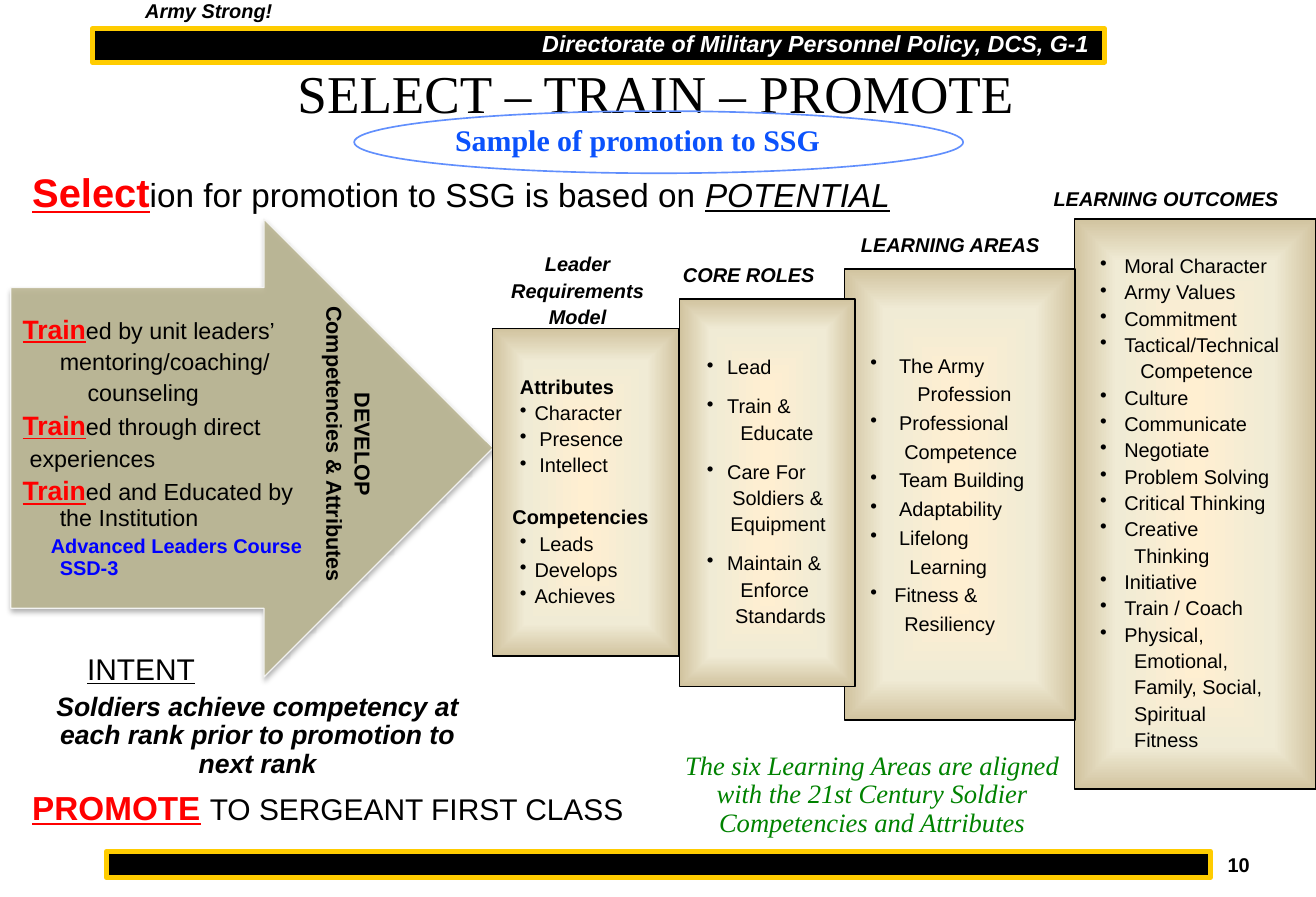
"""Build the Select, Train, Promote slide for sergeant promotion."""
import dataclasses
import typing

import pptx
import pptx.dml.color
import pptx.enum.shapes
import pptx.enum.text
import pptx.oxml
import pptx.oxml.ns
import pptx.util

Cm = pptx.util.Cm
Pt = pptx.util.Pt
Shapes = pptx.enum.shapes.MSO_SHAPE
Align = pptx.enum.text.PP_ALIGN
Anchor = pptx.enum.text.MSO_ANCHOR
Format = dict[str, typing.Any]


@dataclasses.dataclass(frozen=True)
class Theme:
    sans: str = "Arial"
    serif: str = "Times New Roman"
    black: str = "000000"
    white: str = "FFFFFF"
    red: str = "FF0000"
    gold: str = "FFCC00"
    blue: str = "0000FF"
    sample_blue: str = "0B52FC"
    ellipse_blue: str = "618FFD"
    green: str = "008200"
    arrow: str = "BBB693"
    arrow_edge: str = "F9F9F9"
    panel_stops: tuple = ((0, "FFEFD1"), (65, "F0EBD5"), (100, "D1C39F"))
    small: float = 12
    vertical: float = 13
    medium: float = 14
    large: float = 16
    heading: float = 18
    lead: float = 20
    keyword: float = 24
    title: float = 32


THEME = Theme()
PLAIN: Format = {"name": THEME.sans, "size": THEME.small, "color": THEME.black}
LABEL: Format = PLAIN | {"bold": True, "italic": True}
KEYWORD: Format = PLAIN | {"size": THEME.large, "color": THEME.red, "bold": True, "underline": True}
TRAINING: Format = PLAIN | {"size": THEME.medium}
LEAD: Format = PLAIN | {"size": THEME.lead}
COURSE: Format = PLAIN | {"bold": True, "color": THEME.blue}


class Run(typing.NamedTuple):
    text: str
    style: Format = PLAIN


class Line(typing.NamedTuple):
    runs: tuple[Run, ...]
    start: float = 0
    first: float | None = None
    bullet: bool = False
    before: float = 2.9


class Box(typing.NamedTuple):
    left: float
    top: float
    width: float
    height: float

    def lengths(self) -> tuple:
        return tuple(Cm(side) for side in self)


class Panel(typing.NamedTuple):
    box: Box
    lines: tuple[Line, ...]
    spacing: float = 0.9


class Caption(typing.NamedTuple):
    box: Box
    lines: tuple[str, ...]
    style: Format = LABEL
    align: typing.Any = Align.LEFT
    wrap: bool = False
    rotation: float = 0


def item(text: str, start: float, dot: float, before: float = 2.9) -> Line:
    return Line((Run(text),), start, dot, True, before)


def more(text: str, start: float) -> Line:
    return Line((Run(text),), start)


def heading(text: str, start: float, before: float = 2.9) -> Line:
    return Line((Run(text, PLAIN | {"bold": True}),), start, before=before)


def trained(text: str, before: float = 3.5) -> Line:
    return Line((Run("Train", KEYWORD), Run(text, TRAINING)), 0.79, 0, before=before)


OUTCOMES = (
    *(item(text, 0.81, 0.3) for text in ("Moral Character", "Army Values", "Commitment", "Tactical/Technical")),
    more("Competence", 1.15),
    *(item(text, 0.81, 0.3) for text in (
        "Culture", "Communicate", "Negotiate", "Problem Solving", "Critical Thinking", "Creative")),
    more("Thinking", 1.02),
    *(item(text, 0.81, 0.3) for text in ("Initiative", "Train / Coach", "Physical,")),
    *(more(text, 1.02) for text in ("Emotional,", "Family, Social,", "Spiritual", "Fitness")),
)
AREAS = (
    item("The Army", 0.91, 0.3), more("Profession", 1.3),
    item("Professional", 0.91, 0.3), more("Competence", 1.02),
    *(item(text, 0.91, 0.3) for text in ("Team Building", "Adaptability", "Lifelong")),
    more("Learning", 1.13), item("Fitness &", 0.81, 0.3), more("Resiliency", 1.02),
)
ROLES = (
    item("Lead", 0.76, 0.33),
    item("Train &", 0.76, 0.33, 10.5), more("Educate", 1.04),
    item("Care For", 0.76, 0.33, 10.5), more("Soldiers &", 0.87), more("Equipment", 0.83),
    item("Maintain &", 0.76, 0.33, 10.5), more("Enforce", 1.04), more("Standards", 0.93),
)
MODEL = (
    heading("Attributes", 0.33), item("Character", 0.64, 0.33),
    item("Presence", 0.74, 0.33), item("Intellect", 0.74, 0.33),
    heading("Competencies", 0.17, 18.3), item("Leads", 0.74, 0.33),
    item("Develops", 0.64, 0.33), item("Achieves", 0.64, 0.33),
)
TRAINING_LINES = (
    trained("ed by unit leaders’"),
    Line((Run("mentoring/coaching/", TRAINING),), 0.79, before=3.5),
    Line((Run("counseling", TRAINING),), 1.38, before=3.5),
    trained("ed through direct"),
    Line((Run("experiences", TRAINING),), 0.15, before=3.5),
    trained("ed and Educated by the Institution"),
    Line((Run("Advanced Leaders Course SSD-3", COURSE),), 0.79, 0.6),
)
PANELS = (
    Panel(Box(22.81, 4.65, 5.13, 12.11), OUTCOMES),
    Panel(Box(17.93, 5.71, 4.9, 9.58), AREAS, 1.0),
    Panel(Box(14.43, 6.35, 3.73, 8.23), ROLES),
    Panel(Box(10.46, 6.98, 3.96, 6.96), MODEL),
)
BARS = (Box(2.26, 18.08, 23.44, 0.56), Box(1.96, 0.61, 21.49, 0.71))
CAPTIONS = (
    Caption(Box(25.78, 18.03, 1.04, 0.76), ("10",), PLAIN | {"bold": True}, Align.CENTER),
    Caption(Box(11.23, 0.56, 12.19, 0.86), ("Directorate of Military Personnel Policy, DCS, G-1",),
            LABEL | {"size": THEME.medium, "color": THEME.white}, Align.CENTER),
    Caption(Box(2.44, -0.1, 3.99, 0.76), ("Army Strong!",), align=Align.CENTER),
    Caption(Box(3.02, 8.92, 9.04, 1.02), ("DEVELOP", "Competencies & Attributes"),
            PLAIN | {"size": THEME.vertical, "bold": True}, Align.CENTER, rotation=90),
    Caption(Box(0.71, 14.6, 9.52, 2.11),
            ("Soldiers achieve competency at each rank prior to promotion to next rank",),
            LABEL | {"size": THEME.large}, Align.CENTER, True),
    Caption(Box(18.03, 4.88, 4.34, 0.71), ("LEARNING AREAS",)),
    Caption(Box(22.12, 3.89, 5.33, 0.71), ("LEARNING OUTCOMES",)),
    Caption(Box(14.25, 5.51, 3.35, 0.71), ("CORE ROLES",)),
    Caption(Box(1.6, 13.77, 2.82, 0.94), ("INTENT",), PLAIN | {"size": THEME.heading, "underline": True}),
    Caption(Box(14.22, 15.85, 8.59, 2.11),
            ("The six Learning Areas are aligned with the 21st Century Soldier Competencies and Attributes",),
            PLAIN | {"name": THEME.serif, "size": THEME.large, "color": THEME.green, "italic": True},
            Align.CENTER, True),
    Caption(Box(10.59, 5.28, 3.35, 1.85), ("Leader", "Requirements", "Model"), align=Align.CENTER),
)


def rgb(code: str) -> pptx.dml.color.RGBColor:
    return pptx.dml.color.RGBColor.from_string(code)


def apply_format(font: typing.Any, style: Format) -> None:
    for key, value in style.items():
        if key == "color":
            font.color.rgb = rgb(value)
        else:
            setattr(font, key, Pt(value) if key == "size" else value)


def write(frame: typing.Any, lines: typing.Iterable[Line], spacing: float = 0.9,
          align: typing.Any = Align.LEFT, anchor: typing.Any = Anchor.TOP, wrap: bool = True) -> None:
    frame.auto_size = pptx.enum.text.MSO_AUTO_SIZE.NONE
    frame.word_wrap, frame.vertical_anchor = wrap, anchor
    for index, line in enumerate(lines):
        paragraph = frame.add_paragraph() if index else frame.paragraphs[0]
        properties = paragraph._p.get_or_add_pPr()
        first = line.start if line.first is None else line.first
        properties.set("marL", str(Cm(line.start)))
        properties.set("indent", str(Cm(first - line.start)))
        mark = '<a:buChar {} char="•"/>' if line.bullet else "<a:buNone {}/>"
        properties.append(pptx.oxml.parse_xml(mark.format(pptx.oxml.ns.nsdecls("a"))))
        paragraph.alignment, paragraph.line_spacing = align, spacing
        paragraph.space_before = Pt(line.before if index else 0)
        for text, style in line.runs:
            run = paragraph.add_run()
            run.text = text
            apply_format(run.font, style)


def draw_shape(slide: typing.Any, kind: typing.Any, box: Box, fill: str | None, edge: str, weight: float) -> typing.Any:
    shape = slide.shapes.add_shape(kind, *box.lengths())
    shape.shadow.inherit = False
    if fill:
        shape.fill.solid()
        shape.fill.fore_color.rgb = rgb(fill)
    else:
        shape.fill.background()
    shape.line.color.rgb, shape.line.width = rgb(edge), Pt(weight)
    return shape


def draw_panel(slide: typing.Any, panel: Panel) -> None:
    shape = draw_shape(slide, Shapes.RECTANGLE, panel.box, THEME.white, THEME.black, 1)
    stops = "".join(f'<a:gs pos="{place * 1000}"><a:srgbClr val="{code}"/></a:gs>' for place, code in THEME.panel_stops)
    gradient = pptx.oxml.parse_xml(
        f'<a:gradFill {pptx.oxml.ns.nsdecls("a")} rotWithShape="1"><a:gsLst>{stops}</a:gsLst><a:path path="shape">'
        '<a:fillToRect l="50000" t="50000" r="50000" b="50000"/></a:path></a:gradFill>')
    properties = shape._element.spPr
    properties.replace(properties.find(pptx.oxml.ns.qn("a:solidFill")), gradient)
    write(shape.text_frame, panel.lines, panel.spacing, anchor=Anchor.MIDDLE)


def draw_arrow(slide: typing.Any) -> None:
    arrow = draw_shape(slide, Shapes.RIGHT_ARROW, Box(0.23, 4.65, 10.24, 9.73), THEME.arrow, THEME.arrow_edge, 0.75)
    arrow.adjustments[0], arrow.adjustments[1] = 0.7, 0.5
    namespace = pptx.oxml.ns.nsdecls("a")
    properties = arrow._element.spPr
    for color in properties.iter(pptx.oxml.ns.qn("a:srgbClr")):
        color.append(pptx.oxml.parse_xml(f'<a:alpha {namespace} val="90000"/>'))
    properties.find(pptx.oxml.ns.qn("a:effectLst")).append(pptx.oxml.parse_xml(
        f'<a:outerShdw {namespace} blurRad="{Pt(3.1)}" dist="{Pt(1.8)}" dir="5400000" rotWithShape="0">'
        f'<a:srgbClr val="{THEME.black}"><a:alpha val="35000"/></a:srgbClr></a:outerShdw>'))
    arrow.text_frame.margin_right = Cm(0.45)
    write(arrow.text_frame, TRAINING_LINES, anchor=Anchor.MIDDLE)


def draw_caption(slide: typing.Any, caption: Caption) -> None:
    label = slide.shapes.add_textbox(*caption.box.lengths())
    label.rotation = caption.rotation
    lines = [Line((Run(text, caption.style),)) for text in caption.lines]
    write(label.text_frame, lines, align=caption.align, wrap=caption.wrap)


def place(placeholder: typing.Any, box: Box) -> typing.Any:
    for side, value in zip(box._fields, box.lengths()):
        setattr(placeholder, side, value)
    return placeholder.text_frame


def main() -> None:
    deck = pptx.Presentation()
    deck.slide_width, deck.slide_height = Cm(27.94), Cm(19.05)
    slide = deck.slides.add_slide(deck.slide_layouts[1])
    title_style = PLAIN | {"name": THEME.serif, "size": THEME.title}
    write(place(slide.shapes.title, Box(1.35, 0.36, 25.15, 3.18)),
          [Line((Run("SELECT – TRAIN – PROMOTE", title_style),))], 1.0, Align.CENTER, Anchor.MIDDLE)
    write(place(slide.placeholders[1], Box(0.43, 3.43, 25.76, 15.34)), [
        Line((Run("Select", KEYWORD | {"size": THEME.keyword}),
              Run("ion for promotion to SSG is based on ", LEAD),
              Run("POTENTIAL", LEAD | {"italic": True, "underline": True}))),
        Line((Run("PROMOTE", KEYWORD | {"size": THEME.lead}), Run(" ", LEAD),
              Run("TO SERGEANT FIRST CLASS", PLAIN | {"size": THEME.heading})), before=344),
    ], 1.0)
    for bar in BARS:
        draw_shape(slide, Shapes.RECTANGLE, bar, THEME.black, THEME.gold, 3)
    draw_arrow(slide)
    for panel in PANELS:
        draw_panel(slide, panel)
    for caption in CAPTIONS:
        draw_caption(slide, caption)
    sample = draw_shape(slide, Shapes.OVAL, Box(7.52, 2.36, 12.93, 1.32), None, THEME.ellipse_blue, 1)
    sample_style = {"name": THEME.serif, "size": THEME.heading, "color": THEME.sample_blue, "bold": True}
    write(sample.text_frame, [Line((Run("Sample of promotion to SSG", sample_style),))])
    deck.save("out.pptx")


if __name__ == "__main__":
    main()
